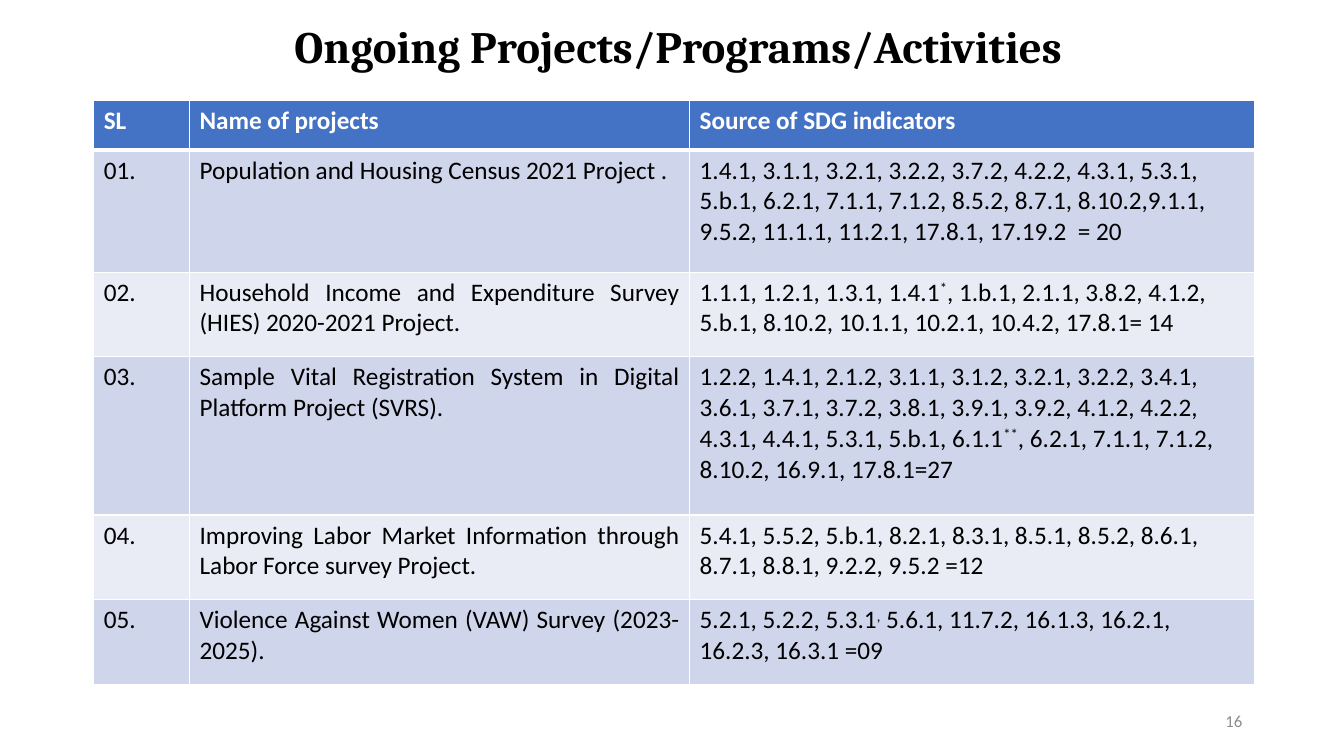
"""Build the slide that lists ongoing projects and their SDG indicators."""

from dataclasses import dataclass

from lxml.etree import SubElement
from pptx import Presentation
from pptx.dml.color import RGBColor
from pptx.enum.text import MSO_ANCHOR, PP_ALIGN
from pptx.oxml.ns import qn
from pptx.util import Inches, Pt

WHITE, BLACK, GRAY = "FFFFFF", "000000", "8C8C8C"
HEADER_FILL = "4472C4"
BAND_FILLS = ("CFD5EA", "E9EBF5")
COLUMN_WIDTHS = (0.95, 4.96, 5.6)
ROW_HEIGHTS = (0.49, 1.21, 0.84, 1.57, 0.84, 0.84)
HEADINGS = ("SL", "Name of projects", "Source of SDG indicators")
RAISED_MARK = "^"


@dataclass(frozen=True)
class Project:
    name: str
    indicators: str


PROJECTS = (
    Project(
        "Population and Housing Census 2021 Project .",
        "1.4.1, 3.1.1, 3.2.1, 3.2.2, 3.7.2, 4.2.2, 4.3.1, 5.3.1, 5.b.1, 6.2.1, "
        "7.1.1, 7.1.2, 8.5.2, 8.7.1, 8.10.2,9.1.1, 9.5.2, 11.1.1, 11.2.1, "
        "17.8.1, 17.19.2  = 20",
    ),
    Project(
        "Household Income and Expenditure Survey (HIES) 2020-2021 Project.",
        "1.1.1, 1.2.1, 1.3.1, 1.4.1^*^, 1.b.1, 2.1.1, 3.8.2, 4.1.2, 5.b.1, "
        "8.10.2, 10.1.1, 10.2.1, 10.4.2, 17.8.1= 14",
    ),
    Project(
        "Sample Vital Registration System in Digital Platform Project (SVRS).",
        "1.2.2, 1.4.1, 2.1.2, 3.1.1, 3.1.2, 3.2.1, 3.2.2, 3.4.1, 3.6.1, 3.7.1, "
        "3.7.2, 3.8.1, 3.9.1, 3.9.2, 4.1.2, 4.2.2, 4.3.1, 4.4.1, 5.3.1, 5.b.1, "
        "6.1.1^**^, 6.2.1, 7.1.1, 7.1.2, 8.10.2, 16.9.1, 17.8.1=27",
    ),
    Project(
        "Improving Labor Market Information through Labor Force survey Project.",
        "5.4.1, 5.5.2, 5.b.1, 8.2.1, 8.3.1, 8.5.1, 8.5.2, 8.6.1, 8.7.1, 8.8.1, "
        "9.2.2, 9.5.2 =12",
    ),
    Project(
        "Violence Against Women (VAW) Survey (2023-2025).",
        "5.2.1, 5.2.2, 5.3.1^,^ 5.6.1, 11.7.2, 16.1.3, 16.2.1, 16.2.3, 16.3.1 =09",
    ),
)


def color(value: str) -> RGBColor:
    return RGBColor.from_string(value)


def write_text(frame, text: str, *, size: float = 18, font: str = "Calibri",
               ink: str = BLACK, bold: bool = False, align=PP_ALIGN.LEFT,
               line_spacing: float = 1.0) -> None:
    para = frame.paragraphs[0]
    para.alignment = align
    para.line_spacing = line_spacing
    for index, piece in enumerate(text.split(RAISED_MARK)):
        span = para.add_run()
        span.text = piece
        span.font.size = Pt(size)
        span.font.name = font
        span.font.bold = bold
        span.font.color.rgb = color(ink)
        if index % 2:
            span._r.get_or_add_rPr().set("baseline", "30000")


def add_text_box(page, left: float, top: float, width: float, height: float,
                 text: str, **text_format) -> None:
    box = page.shapes.add_textbox(
        Inches(left), Inches(top), Inches(width), Inches(height))
    box.text_frame.word_wrap = True
    box.text_frame.vertical_anchor = MSO_ANCHOR.MIDDLE
    write_text(box.text_frame, text, **text_format)


def set_borders(cell, top: float, bottom: float) -> None:
    properties = cell._tc.get_or_add_tcPr()
    widths = {"a:lnL": 1, "a:lnR": 1, "a:lnT": top, "a:lnB": bottom}
    for tag, width in widths.items():
        line = SubElement(properties, qn(tag), w=str(Pt(width)))
        fill = SubElement(line, qn("a:solidFill"))
        SubElement(fill, qn("a:srgbClr"), val=WHITE)


def fill_cell(cell, text: str, fill: str, *, top: float = 1, bottom: float = 1,
              **text_format) -> None:
    set_borders(cell, top, bottom)
    cell.fill.solid()
    cell.fill.fore_color.rgb = color(fill)
    write_text(cell.text_frame, text, **text_format)


def add_project_table(page) -> None:
    table = page.shapes.add_table(
        len(ROW_HEIGHTS), len(COLUMN_WIDTHS), Inches(0.93), Inches(1),
        Inches(sum(COLUMN_WIDTHS)), Inches(sum(ROW_HEIGHTS))).table
    for column, width in zip(table.columns, COLUMN_WIDTHS):
        column.width = Inches(width)
    for row, height in zip(table.rows, ROW_HEIGHTS):
        row.height = Inches(height)
    for column, heading in enumerate(HEADINGS):
        fill_cell(table.cell(0, column), heading, HEADER_FILL, bottom=3,
                  ink=WHITE, bold=True)
    alignments = (PP_ALIGN.LEFT, PP_ALIGN.JUSTIFY, PP_ALIGN.LEFT)
    for number, project in enumerate(PROJECTS, start=1):
        texts = (f"{number:02}.", project.name, project.indicators)
        fill = BAND_FILLS[(number - 1) % 2]
        for column, (text, align) in enumerate(zip(texts, alignments)):
            fill_cell(table.cell(number, column), text, fill,
                      top=3 if number == 1 else 1, align=align)


def main() -> None:
    deck = Presentation()
    deck.slide_width, deck.slide_height = Inches(13.33), Inches(7.5)
    page = deck.slides.add_slide(deck.slide_layouts[6])
    add_text_box(page, 0.98, 0.11, 11.5, 0.75,
                 "Ongoing Projects/Programs/Activities", size=32, font="Cambria",
                 bold=True, align=PP_ALIGN.CENTER, line_spacing=0.9)
    add_project_table(page)
    add_text_box(page, 9.42, 6.95, 3, 0.4, "16", size=12, ink=GRAY,
                 align=PP_ALIGN.RIGHT)
    deck.save("out.pptx")


if __name__ == "__main__":
    main()
